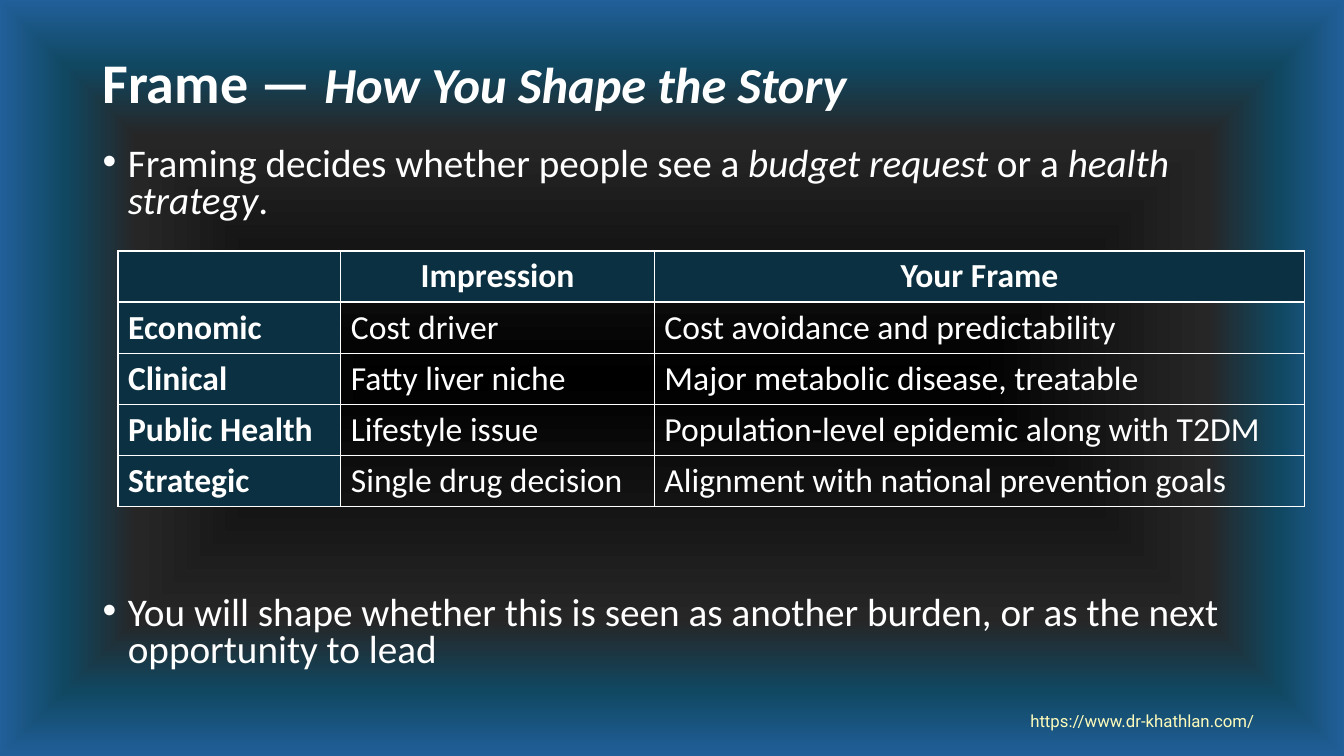
from dataclasses import dataclass

from pptx import Presentation
from pptx import util as u
from pptx.dml.color import RGBColor
from pptx.enum import text
from pptx.oxml import parse_xml
from pptx.oxml.ns import nsdecls, qn

WIDTH, HEIGHT = u.Inches(13.33), u.Inches(7.5)


@dataclass(frozen=True)
class Theme:
    white: str = "FFFFFF"
    header: str = "0B3041"
    link: str = "FEFCBA"
    glow: tuple = ((0, "000000"), (64, "262626"), (83, "104862"), (100, "215F9A"))
    font: str = "Calibri"
    link_font: str = "Roboto"
    title_size: int = 40
    subtitle_size: int = 36
    body_size: int = 28
    table_size: int = 24
    link_size: int = 12


@dataclass(frozen=True)
class Area:
    """A rectangle in percent of the slide's width and height."""
    left: float
    top: float
    width: float
    height: float

    def emu(self) -> tuple:
        return (across(self.left), down(self.top),
                across(self.width), down(self.height))


@dataclass(frozen=True)
class Span:
    text: str
    italic: bool = False
    size: int | None = None


@dataclass(frozen=True)
class Bullet:
    spans: tuple
    space_before: int = 0


THEME = Theme()
TITLE_AREA = Area(6.9, 5.33, 86.25, 11.87)
BODY_AREA = Area(6.9, 18.8, 86.25, 71.33)
LINK_AREA = Area(71.2, 93.33, 27.6, 4)
TABLE_AREA = Area(8.78, 33.2, 88.3, 33.8)
COLUMN_WIDTHS = (16.58, 23.33, 48.39)

TITLE = (Span("Frame — ", size=THEME.title_size),
         Span("How You Shape the Story", True, THEME.subtitle_size))
BULLETS = (
    Bullet((Span("Framing decides whether people see a "), Span("budget request", True),
            Span(" or a "), Span("health strategy", True), Span("."))),
    Bullet((Span("You will shape whether this is seen as another burden, "
                 "or as the next opportunity to lead"),), space_before=267),
)
FRAMES = (
    ("", "Impression", "Your Frame"),
    ("Economic", "Cost driver", "Cost avoidance and predictability"),
    ("Clinical", "Fatty liver niche", "Major metabolic disease, treatable"),
    ("Public Health", "Lifestyle issue", "Population-level epidemic along with T2DM"),
    ("Strategic", "Single drug decision", "Alignment with national prevention goals"),
)


def across(percent: float) -> int:
    return round(WIDTH * percent / 100)


def down(percent: float) -> int:
    return round(HEIGHT * percent / 100)


def set_font(font, size: int | None, color: str = THEME.white,
             name: str = THEME.font, bold: bool = False) -> None:
    font.name, font.bold = name, bold
    font.color.rgb = RGBColor.from_string(color)
    if size:
        font.size = u.Pt(size)


def add_box(page, area: Area, anchor=text.MSO_ANCHOR.TOP):
    frame = page.shapes.add_textbox(*area.emu()).text_frame
    frame.word_wrap = True
    frame.vertical_anchor = anchor
    return frame


def add_spans(para, spans: tuple) -> None:
    for span in spans:
        run = para.add_run()
        run.text = span.text
        if span.italic:
            run.font.italic = True
        if span.size:
            run.font.size = u.Pt(span.size)


def paint_background(page) -> None:
    page.background.fill.gradient()
    gradient = page.element.find(".//" + qn("a:gradFill"))
    stops = "".join(f'<a:gs pos="{at * 1000}"><a:srgbClr val="{color}"/></a:gs>'
                    for at, color in THEME.glow)
    gradient.getparent().replace(gradient, parse_xml(
        f'<a:gradFill {nsdecls("a")} rotWithShape="1"><a:gsLst>{stops}</a:gsLst>'
        '<a:path path="shape"><a:fillToRect l="50000" t="50000" r="50000" b="50000"/>'
        '</a:path></a:gradFill>'))


def add_bullets(page) -> None:
    frame = add_box(page, BODY_AREA)
    for index, bullet in enumerate(BULLETS):
        para = frame.add_paragraph() if index else frame.paragraphs[0]
        props = para._p.get_or_add_pPr()
        indent = u.Inches(0.25)
        props.set("marL", str(indent))
        props.set("indent", str(-indent))
        props.append(parse_xml(f'<a:buFont {nsdecls("a")} typeface="Arial"/>'))
        props.append(parse_xml(f'<a:buChar {nsdecls("a")} char="•"/>'))
        para.line_spacing = 0.8
        if bullet.space_before:
            para.space_before = u.Pt(bullet.space_before)
        set_font(para.font, THEME.body_size)
        add_spans(para, bullet.spans)


def add_borders(cell) -> None:
    props = cell._tc.get_or_add_tcPr()
    for index, side in enumerate(("lnL", "lnR", "lnT", "lnB")):
        props.insert(index, parse_xml(
            f'<a:{side} {nsdecls("a")} w="{u.Pt(1)}"><a:solidFill>'
            f'<a:srgbClr val="{THEME.white}"/></a:solidFill></a:{side}>'))


def add_frames_table(page) -> None:
    table = page.shapes.add_table(len(FRAMES), len(COLUMN_WIDTHS),
                                  *TABLE_AREA.emu()).table
    table.first_row = table.horz_banding = False
    for column, width in zip(table.columns, COLUMN_WIDTHS):
        column.width = across(width)
    for r, row in enumerate(FRAMES):
        for c, words in enumerate(row):
            cell = table.cell(r, c)
            is_header = r == 0 or c == 0
            if is_header:
                cell.fill.solid()
                cell.fill.fore_color.rgb = RGBColor.from_string(THEME.header)
            else:
                cell.fill.background()
            add_borders(cell)
            cell.vertical_anchor = text.MSO_ANCHOR.MIDDLE
            cell.text = words
            para = cell.text_frame.paragraphs[0]
            if r == 0:
                para.alignment = text.PP_ALIGN.CENTER
            set_font(para.font, THEME.table_size, bold=is_header)


def main() -> None:
    deck = Presentation()
    deck.slide_width, deck.slide_height = WIDTH, HEIGHT
    page = deck.slides.add_slide(deck.slide_layouts[6])
    paint_background(page)

    # Web address
    para = add_box(page, LINK_AREA).paragraphs[0]
    para.alignment = text.PP_ALIGN.CENTER
    set_font(para.font, THEME.link_size, THEME.link, THEME.link_font)
    add_spans(para, (Span("https://www.dr-khathlan.com/"),))

    # Title
    para = add_box(page, TITLE_AREA, text.MSO_ANCHOR.MIDDLE).paragraphs[0]
    para.line_spacing = 0.9
    set_font(para.font, None, bold=True)
    add_spans(para, TITLE)

    # Body
    add_bullets(page)
    add_frames_table(page)
    deck.save("out.pptx")


if __name__ == "__main__":
    main()
